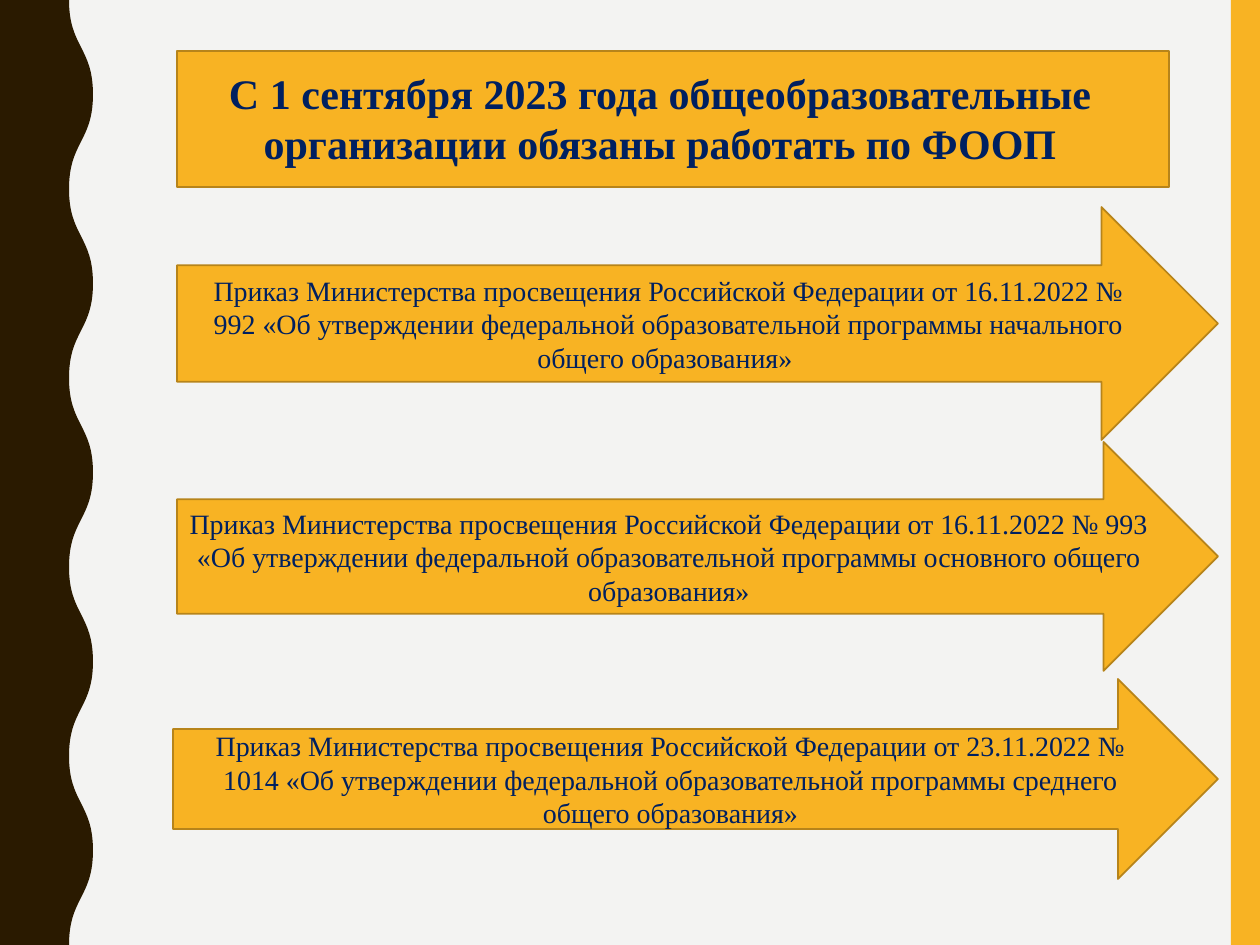
from lxml import etree
from pptx import Presentation
from pptx.dml.color import RGBColor
from pptx.enum.shapes import MSO_SHAPE
from pptx.enum.text import MSO_ANCHOR, PP_ALIGN
from pptx.oxml.ns import qn
from pptx.util import Emu, Pt

PX = 914400 // 126
W, H = 1260, 945
RECT, ARROW = MSO_SHAPE.RECTANGLE, MSO_SHAPE.RIGHT_ARROW
TOP, MIDDLE = MSO_ANCHOR.TOP, MSO_ANCHOR.MIDDLE
CENTER = PP_ALIGN.CENTER
COLORS = {"back": "F3F3F2", "gold": "F8B323", "edge": "B7841A",
          "brown": "2A1A00", "navy": "002060"}
COLORS = {name: RGBColor.from_string(code) for name, code in COLORS.items()}


def add_box(kind, left, top, width, height, edge=True):
    """Add a gold shape, outlined unless edge is off."""
    box = slide.shapes.add_shape(kind, *(Emu(n * PX) for n in (left, top, width, height)))
    box.shadow.inherit = False
    box.fill.solid()
    box.fill.fore_color.rgb = COLORS["gold"]
    if edge:
        box.line.color.rgb = COLORS["edge"]
        box.line.width = Pt(1)
    else:
        box.line.fill.background()
    return box


def write(shape, text, size, anchor, bold=False):
    frame = shape.text_frame
    frame.word_wrap = True
    frame.vertical_anchor = anchor
    para = frame.paragraphs[0]
    para.alignment = CENTER
    run = para.add_run()
    run.text = text
    run.font.name = "Times New Roman"
    run.font.size = Pt(size)
    run.font.bold = bold
    run.font.color.rgb = COLORS["navy"]


deck = Presentation()
deck.slide_width, deck.slide_height = Emu(W * PX), Emu(H * PX)
slide = deck.slides.add_slide(deck.slide_layouts[5])
slide.background.fill.solid()
slide.background.fill.fore_color.rgb = COLORS["back"]

# Side bands: gold on the right, a wavy brown edge on the left
add_box(RECT, 1231, 0, W - 1231, H, edge=False)

LOW, HIGH, WAVES = 69, 93, 10
xs = [(LOW, HIGH)[i % 2] for i in range(WAVES + 1)]
ys = [i * H / WAVES for i in range(WAVES + 1)]
edge = [(round(x * PX), round(y * PX)) for x, y in zip(xs, ys)]
pen = slide.shapes.build_freeform(*edge[0])
pen.add_line_segments([*edge[1:], (0, H * PX), (0, 0)], close=True)
band = pen.convert_to_shape()
band.shadow.inherit = False
band.fill.solid()
band.fill.fore_color.rgb = COLORS["brown"]
band.line.fill.background()

# Bend each straight step of the wave into an S-curve
lines = list(band._element.iter(qn("a:lnTo")))[:WAVES]
for line, (x1, y1), (x2, y2) in zip(lines, edge, edge[1:]):
    mid = (y1 + y2) // 2
    curve = etree.Element(qn("a:cubicBezTo"))
    for x, y in ((x1, mid), (x2, mid), (x2, y2)):
        etree.SubElement(curve, qn("a:pt"), x=str(x), y=str(y))
    line.getparent().replace(line, curve)

# Title on its panel
add_box(RECT, 177, 51, 992, 136)
title = slide.shapes.title
title.left, title.top, title.width, title.height = (
    Emu(n * PX) for n in (151, 61, 1018, 115))
write(title, "С 1 сентября 2023 года общеобразовательные организации "
      "обязаны работать по ФООП", 24, TOP, bold=True)
slide.shapes._spTree.append(title._element)

# One arrow per order
ORDERS = [
    (177, 207, 233, "16.11.2022 № 992", "начального", "» "),
    (177, 442, 229, "16.11.2022 № 993", "основного", "»"),
    (173, 679, 200, "23.11.2022 № 1014", "среднего", "»"),
]
for left, top, height, number, level, close in ORDERS:
    arrow = add_box(ARROW, left, top, 1218 - left, height)
    write(arrow, f"Приказ Министерства просвещения Российской Федерации от {number} "
          f"«Об утверждении федеральной образовательной программы {level} "
          f"общего образования{close}", 16, MIDDLE)

deck.save("out.pptx")
